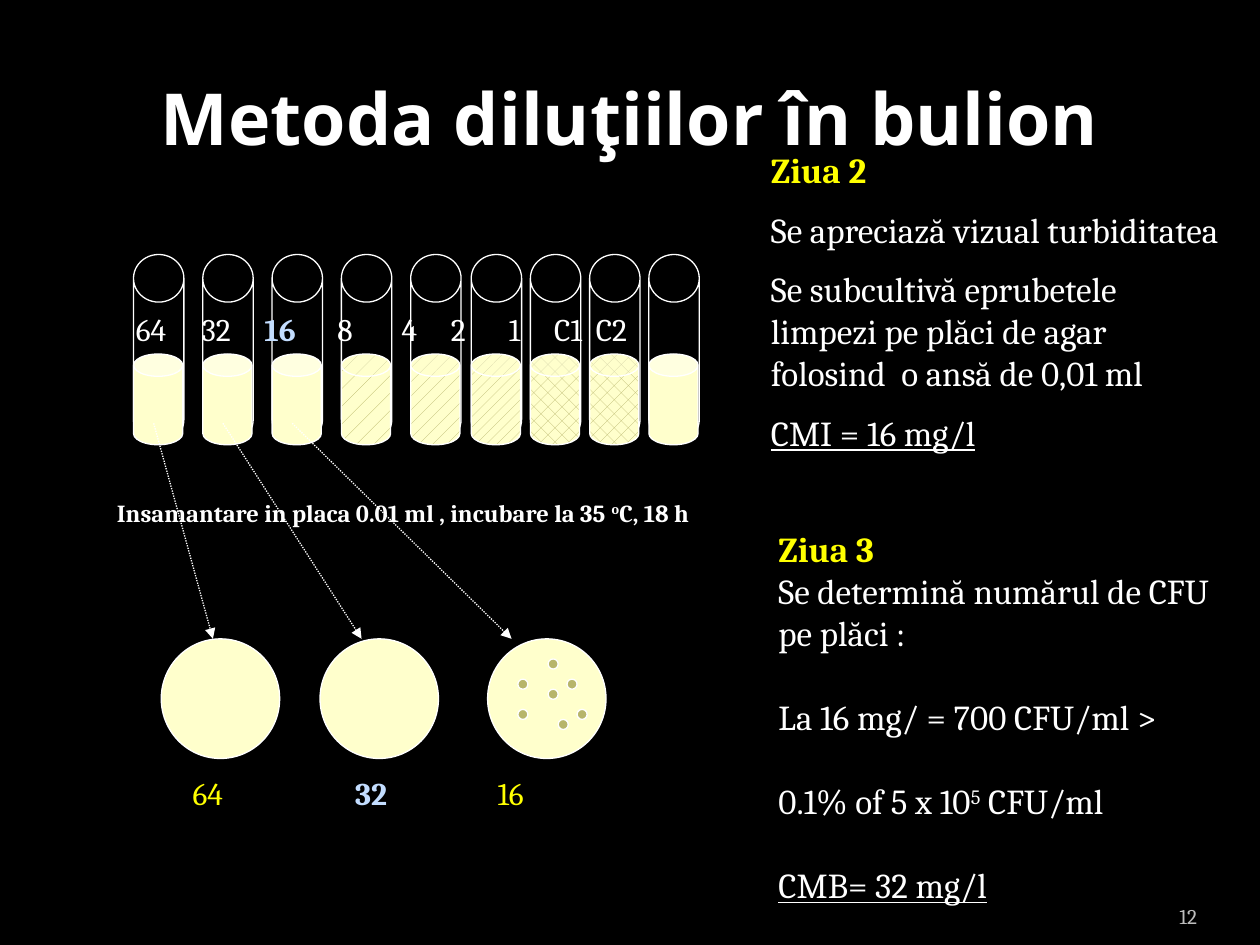
import pptx
import pptx.util
import pptx.dml.color
import pptx.enum.dml
import pptx.enum.shapes
import pptx.enum.text
import pptx.oxml.ns
from lxml import etree

Inches, Pt = pptx.util.Inches, pptx.util.Pt
SHAPE = pptx.enum.shapes.MSO_SHAPE
PATTERN = pptx.enum.dml.MSO_PATTERN_TYPE
ALIGN = pptx.enum.text.PP_ALIGN
ANCHOR = pptx.enum.text.MSO_ANCHOR

COLORS = {"black": "000000", "white": "FFFFFF", "yellow": "FFFF00",
          "pale_blue": "C3DDFF", "broth": "FFFFCC", "colony": "B7B56B",
          "faint_growth": "AEAC58", "grey": "BDBDBD"}

# Content: a paragraph is (spans, space before in points); a span is (text, styles)
TITLE = "Metoda diluţiilor în bulion"
DAY_2 = [
    ([("Ziua 2", "bold yellow")], 0),
    ([("Se apreciază vizual turbiditatea", "")], 10),
    ([("Se subcultivă eprubetele limpezi pe plăci de agar "
       "folosind  o ansă de 0,01 ml", "")], 10),
    ([("CMI = 16 mg/l", "underline")], 10),
]
DAY_3 = [
    ([("Ziua 3", "bold yellow")], 0),
    ([("Se determină numărul de CFU pe plăci :", "")], 0),
    ([("La 16 mg/ = 700 CFU/ml >", "")], 24),
    ([("0.1% of 5 x 10", ""), ("5", "super"), (" CFU/ml", "")], 24),
    ([("CMB= 32 mg/l", "underline")], 24),
]
INCUBATION = [([("Insamantare in placa 0.01 ml , incubare la 35 ", "bold"),
                ("o", "bold super"), ("C, 18 h", "bold")], 0)]
TUBE_LABELS = [([("64\t32\t", ""), ("16", "bold pale_blue"),
                 ("\t8\t4\t2\t1\tC1\tC2", "")], 0)]
TUBE_TABS = [0.52, 1.02, 1.6, 2.11, 2.5, 2.96, 3.32, 3.65]
PLATE_LABELS = [([("64\t", ""), ("32", "bold pale_blue"), ("\t16", "")], 0)]
PLATE_TABS = [1.29, 2.42]

# Turbidity of each tube: None is clear broth
TURBIDITY = [None, None, None,
             (PATTERN.PERCENT_5, "faint_growth"), (PATTERN.PERCENT_10, "colony"),
             (PATTERN.PERCENT_20, "colony"), (PATTERN.PERCENT_25, "colony"),
             (PATTERN.PERCENT_25, "colony"), None]
TUBE_LEFTS = [1.06 + 0.55 * i for i in range(5)] + [3.74 + 0.47 * i for i in range(4)]
PLATE_LEFTS = [1.28, 2.54, 3.87]
COLONIES = [(4.11, 5.39), (4.43, 5.71), (4.11, 5.63), (4.35, 5.23),
            (4.5, 5.39), (4.35, 5.47), (4.58, 5.63)]
ARROW_ENDS = [1.69, 2.87, 4.06]
ARROW_TOP, PLATE_TOP = 3.36, 5.07


def rgb(name):
    return pptx.dml.color.RGBColor.from_string(COLORS[name])


def add_text(page, place, paras, size, color="white", face="Cambria",
             align=ALIGN.LEFT, anchor=ANCHOR.TOP, tabs=()):
    box = page.shapes.add_textbox(*map(Inches, place))
    frame = box.text_frame
    frame.word_wrap = True
    frame.vertical_anchor = anchor
    for i, (spans, gap) in enumerate(paras):
        para = frame.paragraphs[0] if i == 0 else frame.add_paragraph()
        para.alignment = align
        para.space_before = Pt(gap)
        para.font.name, para.font.size = face, Pt(size)
        if tabs:
            props = para._p.get_or_add_pPr()
            tab_list = etree.Element(pptx.oxml.ns.qn("a:tabLst"))
            for tab in tabs:
                etree.SubElement(tab_list, pptx.oxml.ns.qn("a:tab"),
                                 pos=str(Inches(tab)), algn="l")
            props.find(pptx.oxml.ns.qn("a:defRPr")).addprevious(tab_list)
        for text, style in spans:
            span = para.add_run()
            span.text = text
            styles = style.split()
            font = span.font
            font.name, font.size = face, Pt(size)
            font.bold = "bold" in styles
            font.underline = "underline" in styles
            font.color.rgb = rgb(next((s for s in styles if s in COLORS), color))
            if "super" in styles:
                span._r.get_or_add_rPr().set("baseline", "30000")
    return box


def add_figure(page, kind, place, fill=None, pattern=None, rim=None):
    shape = page.shapes.add_shape(kind, *map(Inches, place))
    shape.shadow.inherit = False
    shape.line.color.rgb = rgb("white")
    shape.line.width = Pt(0.75)
    if rim is not None:
        shape.adjustments[0] = rim
    if pattern:
        shape.fill.patterned()
        shape.fill.pattern = pattern[0]
        shape.fill.fore_color.rgb = rgb(pattern[1])
        shape.fill.back_color.rgb = rgb(fill)
    elif fill:
        shape.fill.solid()
        shape.fill.fore_color.rgb = rgb(fill)
    else:
        shape.fill.background()


def add_arrow(page, start, end):
    arrow = page.shapes.add_connector(pptx.enum.shapes.MSO_CONNECTOR.STRAIGHT,
                                      *map(Inches, start + end))
    arrow.line.color.rgb = rgb("white")
    arrow.line.width = Pt(0.75)
    arrow.line.dash_style = pptx.enum.dml.MSO_LINE.ROUND_DOT
    etree.SubElement(arrow.line._get_or_add_ln(),
                     pptx.oxml.ns.qn("a:tailEnd"), type="triangle")
    etree.SubElement(arrow._element.spPr, pptx.oxml.ns.qn("a:effectLst"))


def main():
    deck = pptx.Presentation()
    deck.slide_width, deck.slide_height = Inches(10), Inches(7.5)
    page = deck.slides.add_slide(deck.slide_layouts[6])
    page.background.fill.solid()
    page.background.fill.fore_color.rgb = rgb("black")

    # Title, page number and first day
    add_text(page, (0.5, 0.3, 9, 1.25), [([(TITLE, "bold")], 0)], 41,
             face="Noto Sans", align=ALIGN.CENTER, anchor=ANCHOR.MIDDLE)
    number = add_text(page, (8.67, 7.02, 0.83, 0.4), [([("12", "")], 0)], 12,
                      color="grey", align=ALIGN.RIGHT, anchor=ANCHOR.BOTTOM)
    number.text_frame.margin_left = number.text_frame.margin_right = 0
    add_text(page, (6.02, 1.13, 3.78, 2.96), DAY_2, 20)

    # Tubes with broth
    for left, pattern in zip(TUBE_LEFTS, TURBIDITY):
        add_figure(page, SHAPE.CAN, (left, 2.02, 0.4, 1.5), rim=0.945)
        add_figure(page, SHAPE.CAN, (left, 2.81, 0.39, 0.72), "broth", pattern, 0.454)
    add_text(page, (0.98, 2.41, 5.59, 0.4), TUBE_LABELS, 18, tabs=TUBE_TABS)

    # Transfer from the clear tubes to the plates
    add_text(page, (0.83, 3.9, 5.12, 0.34), INCUBATION, 14)
    for left, end in zip(TUBE_LEFTS, ARROW_ENDS):
        add_arrow(page, (left + 0.16, ARROW_TOP), (end, PLATE_TOP))

    # Plates and colonies
    for left in PLATE_LEFTS:
        add_figure(page, SHAPE.OVAL, (left, PLATE_TOP, 0.94, 0.95), "broth")
    for left, top in COLONIES:
        add_figure(page, SHAPE.OVAL, (left, top, 0.08, 0.08), "colony")
    add_text(page, (1.43, 6.09, 3.78, 0.4), PLATE_LABELS, 18, "yellow", tabs=PLATE_TABS)

    # Second day of reading
    add_text(page, (6.08, 4.14, 3.81, 3.13), DAY_3, 20)
    deck.save("out.pptx")


if __name__ == "__main__":
    main()
